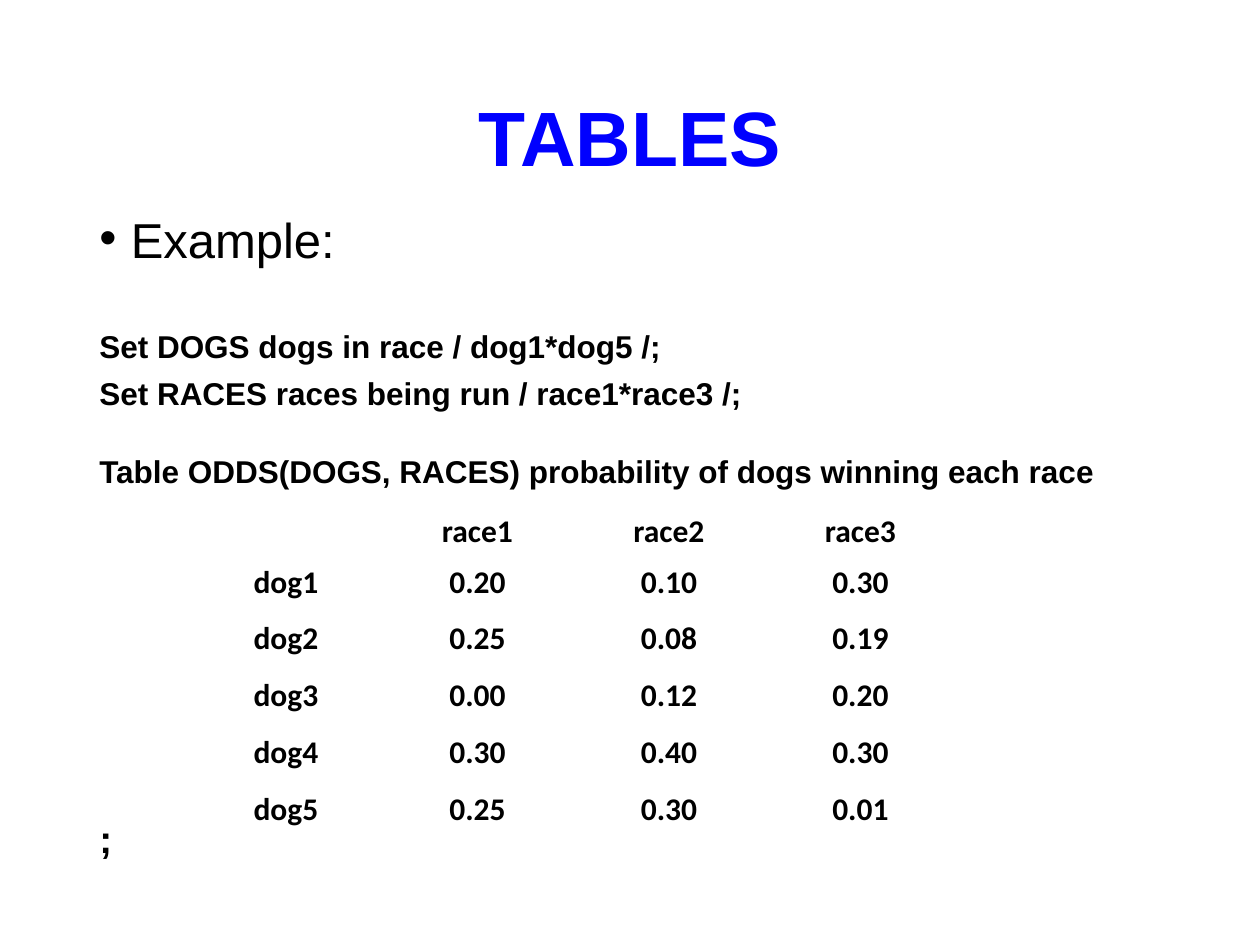
from lxml.etree import SubElement
from pptx import Presentation
from pptx.dml.color import RGBColor
from pptx.enum.text import MSO_ANCHOR as Anchor, PP_ALIGN as Align
from pptx.oxml.ns import qn
from pptx.util import Inches, Pt

COLOURS = {"title": "0000FF", "text": "000000", "border": "FFFFFF"}


class SlideBuilder:
    """Hold the style and current slide, placing elements by shares of its size."""

    def __init__(self, presentation, font="Arial", table_font="Calibri"):
        self.width = presentation.slide_width
        self.height = presentation.slide_height
        self.slide = presentation.slides.add_slide(presentation.slide_layouts[6])
        self.font = font
        self.table_font = table_font

    def place(self, left, top, width, height):
        return (round(left * self.width), round(top * self.height),
                round(width * self.width), round(height * self.height))

    def run(self, paragraph, text, size, bold=True, colour="text", font=None):
        run = paragraph.add_run()
        run.text = text
        run.font.name = font or self.font
        run.font.size = Pt(size)
        run.font.bold = bold
        run.font.color.rgb = RGBColor.from_string(COLOURS[colour])

    def text_box(self, area, anchor=Anchor.TOP):
        frame = self.slide.shapes.add_textbox(*self.place(*area)).text_frame
        frame.word_wrap = True
        frame.vertical_anchor = anchor
        return frame

    def title(self, text, area):
        paragraph = self.text_box(area, Anchor.MIDDLE).paragraphs[0]
        paragraph.alignment = Align.CENTER
        paragraph.line_spacing = 0.9
        self.run(paragraph, text, 44, colour="title")

    def bullet(self, paragraph):
        properties = paragraph._p.get_or_add_pPr()
        properties.set("marL", str(Inches(0.25)))
        properties.set("indent", str(-Inches(0.25)))
        SubElement(properties, qn("a:buFont"), typeface=self.font)
        SubElement(properties, qn("a:buChar"), char="•")

    def body(self, heading, lines, area):
        frame = self.text_box(area)
        paragraph = frame.paragraphs[0]
        self.bullet(paragraph)
        paragraph.line_spacing = 0.8
        self.run(paragraph, heading, 28, bold=False)
        for text, size, spacing, before in lines:
            paragraph = frame.add_paragraph()
            paragraph.line_spacing = spacing
            paragraph.space_before = Pt(before)
            self.run(paragraph, text, size)

    def borders(self, cell, bottom):
        properties = cell._tc.get_or_add_tcPr()
        widths = {"a:lnL": 1, "a:lnR": 1, "a:lnT": 1, "a:lnB": bottom}
        for position, (side, width) in enumerate(widths.items()):
            line = SubElement(properties, qn(side), w=str(Pt(width)))
            fill = SubElement(line, qn("a:solidFill"))
            SubElement(fill, qn("a:srgbClr"), val=COLOURS["border"])
            properties.insert(position, line)

    def table(self, rows, heights, area):
        table = self.slide.shapes.add_table(
            len(rows), len(rows[0]), *self.place(*area)).table
        for row, height in zip(table.rows, heights):
            row.height = round(height * self.height)
        for row_index, values in enumerate(rows):
            for column_index, value in enumerate(values):
                cell = table.cell(row_index, column_index)
                cell.fill.background()
                self.borders(cell, 1 if row_index else 3)
                paragraph = cell.text_frame.paragraphs[0]
                paragraph.alignment = Align.CENTER
                if value:
                    self.run(paragraph, value, 18, font=self.table_font)


def main():
    presentation = Presentation()
    presentation.slide_width = Inches(10)
    presentation.slide_height = Inches(7.5)
    builder = SlideBuilder(presentation)
    builder.title("TABLES", (0.069, 0.4 / 7.5, 0.862, 1.45 / 7.5))
    builder.body("Example:", [
        ("Set DOGS dogs in race / dog1*dog5 /;", 18, 0.8, 38),
        ("Set RACES races being run / race1*race3 /;", 18, 0.8, 10),
        ("Table ODDS(DOGS, RACES) probability of dogs winning each race", 18, 1.6, 10),
        (";", 22, 0.8, 191),
    ], (0.069, 1.7 / 7.5, 0.89, 5.39 / 7.5))
    odds = [
        ("", "race1", "race2", "race3"),
        ("dog1", "0.20", "0.10", "0.30"),
        ("dog2", "0.25", "0.08", "0.19"),
        ("dog3", "0.00", "0.12", "0.20"),
        ("dog4", "0.30", "0.40", "0.30"),
        ("dog5", "0.25", "0.30", "0.01"),
    ]
    heights = [0.35 / 7.5] + [0.06] * 5
    builder.table(odds, heights, (0.151, 4.02 / 7.5, 0.608, sum(heights)))
    presentation.save("out.pptx")


if __name__ == "__main__":
    main()
